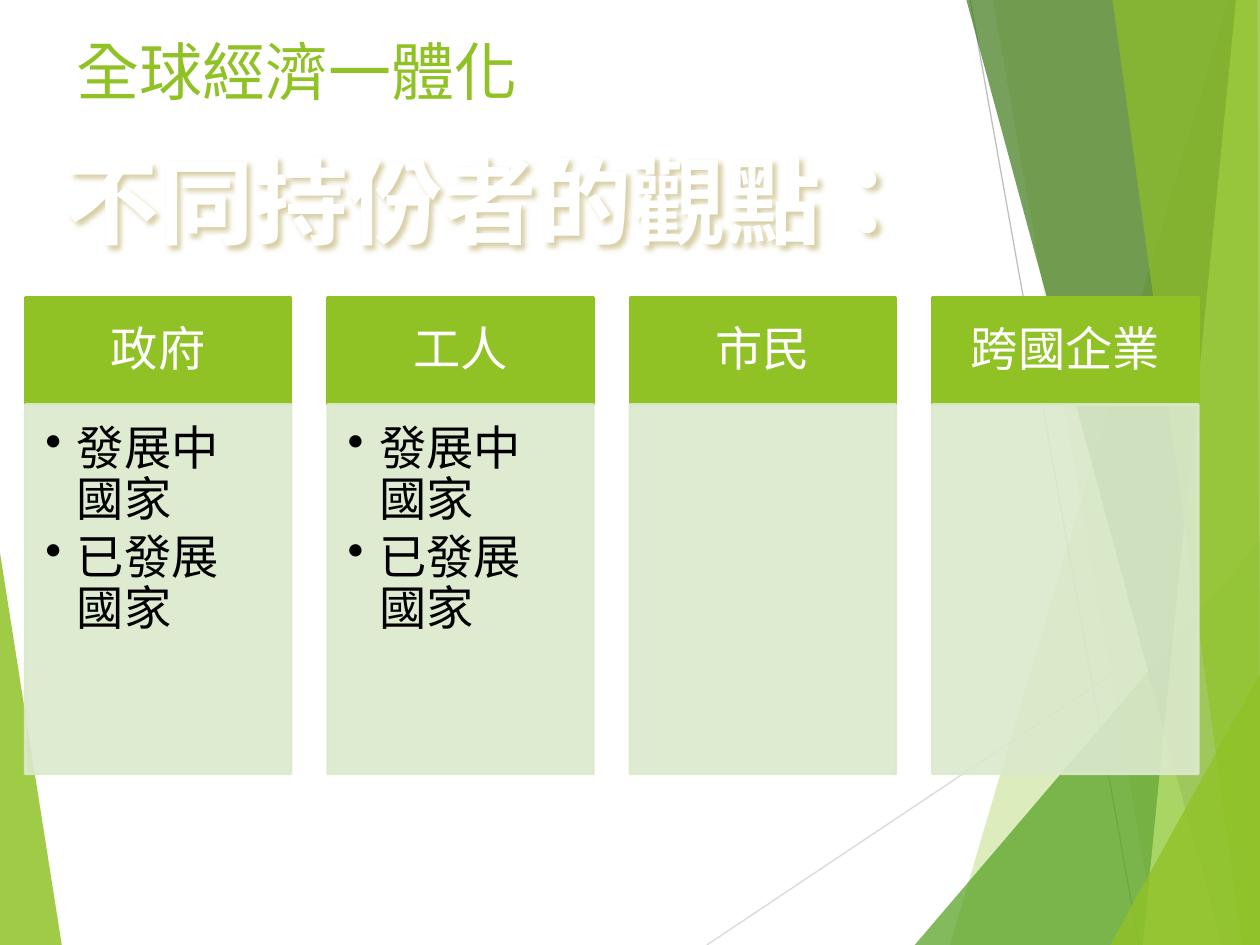
from dataclasses import dataclass

from pptx import Presentation
from pptx.dml.color import RGBColor
from pptx.enum.shapes import MSO_CONNECTOR, MSO_SHAPE
from pptx.enum.text import MSO_ANCHOR as Anchor, PP_ALIGN as Align
from pptx.oxml import parse_xml
from pptx.oxml.ns import nsdecls, qn
from pptx.oxml.xmlchemy import OxmlElement
from pptx.util import Inches, Pt


@dataclass(frozen=True)
class Theme:
    font: str = "Lato"
    language: str = "zh-TW"
    green: str = "90C226"
    leaf: str = "54A021"
    forest: str = "3F7819"
    lime: str = "C0E474"
    pale: str = "DBE9CD"
    white: str = "FFFFFF"
    black: str = "000000"
    glow: str = "D8CFA6"
    light_rule: str = "D9D9D9"
    dark_rule: str = "BFBFBF"
    title_size: int = 36
    headline_size: int = 54
    panel_size: int = 27
    line_spacing: float = 0.9


@dataclass(frozen=True)
class Facet:
    """A translucent polygon; points are percentages of the slide."""
    points: tuple
    color: str
    alpha: int


@dataclass(frozen=True)
class Rule:
    start: tuple
    end: tuple
    color: str


@dataclass(frozen=True)
class Panel:
    heading: str
    items: tuple = ()


THEME = Theme()
WIDTH, HEIGHT = Inches(10), Inches(7.5)

LEFT_FACET = Facet(((0, 58.5), (4.9, 100), (0, 100)), THEME.green, 85)
RULES = (
    Rule((56.1, 100), (100, 60.9), THEME.light_rule),
    Rule((77, 0), (90.4, 100), THEME.dark_rule),
)
RIGHT_FACETS = (
    Facet(((97.5, 0), (75.4, 100), (100, 100), (100, 0)), THEME.green, 30),
    Facet(((78.8, 0), (91.9, 100), (100, 100), (100, 0)), THEME.green, 20),
    Facet(((72.6, 100), (100, 57.2), (100, 100)), THEME.leaf, 72),
    Facet(((76.7, 0), (97, 100), (100, 100), (100, 0)), THEME.forest, 70),
    Facet(((98.1, 0), (90.7, 100), (100, 100), (100, 0)), THEME.lime, 70),
    Facet(((88.3, 0), (98.6, 100), (100, 100), (99.8, 0)), THEME.green, 65),
    Facet(((88.1, 100), (100, 71.3), (100, 100)), THEME.green, 80),
)

COUNTRIES = ("發展中國家", "已發展國家")
PANELS = (Panel("政府", COUNTRIES), Panel("工人", COUNTRIES),
          Panel("市民"), Panel("跨國企業"))
# Panel grid, in percent of the slide
PANEL_LEFT, PANEL_PITCH, PANEL_WIDTH = 2, 24, 21.1
HEADING_TOP, BODY_TOP, BODY_BOTTOM = 31.5, 42.8, 81.9


def across(share: float) -> int:
    return round(WIDTH * share / 100)


def down(share: float) -> int:
    return round(HEIGHT * share / 100)


def set_alpha(shape, percent: int) -> None:
    for color in shape.element.iter(qn("a:srgbClr")):
        alpha = OxmlElement("a:alpha")
        alpha.set("val", str(percent * 1000))
        color.append(alpha)


def write(paragraph, text: str, size: int, color: str, **formats) -> None:
    run = paragraph.add_run()
    run.text = text
    run.font.color.rgb = RGBColor.from_string(color)
    for name, value in {"name": THEME.font, "size": Pt(size), **formats}.items():
        setattr(run.font, name, value)
    run.font._element.set("lang", THEME.language)


def set_frame(frame, anchor, insets: tuple) -> None:
    frame.word_wrap = True
    frame.vertical_anchor = anchor
    sides = ("margin_left", "margin_top", "margin_right", "margin_bottom")
    for side, inset in zip(sides, insets):
        setattr(frame, side, Inches(inset))


def draw_facet(slide, facet: Facet) -> None:
    first, *rest = [(across(x), down(y)) for x, y in facet.points]
    builder = slide.shapes.build_freeform(*first)
    builder.add_line_segments(rest)
    shape = builder.convert_to_shape()
    shape.shadow.inherit = False
    shape.fill.solid()
    shape.fill.fore_color.rgb = RGBColor.from_string(facet.color)
    shape.line.fill.background()
    set_alpha(shape, facet.alpha)


def draw_rule(slide, rule: Rule) -> None:
    (x1, y1), (x2, y2) = rule.start, rule.end
    line = slide.shapes.add_connector(MSO_CONNECTOR.STRAIGHT, across(x1),
                                      down(y1), across(x2), down(y2))
    line.line.width = Pt(0.75)
    line.line.color.rgb = RGBColor.from_string(rule.color)
    line.element.spPr.append(OxmlElement("a:effectLst"))


def draw_box(slide, column: int, top: float, bottom: float, color: str):
    box = slide.shapes.add_shape(
        MSO_SHAPE.RECTANGLE, across(PANEL_LEFT + column * PANEL_PITCH),
        down(top), across(PANEL_WIDTH), down(bottom - top))
    box.shadow.inherit = False
    box.fill.solid()
    box.fill.fore_color.rgb = RGBColor.from_string(color)
    box.line.color.rgb = RGBColor.from_string(color)
    box.line.width = Pt(1.5)
    return box


def add_bullet(paragraph) -> None:
    properties = paragraph._p.get_or_add_pPr()
    indent = Inches(0.25)
    properties.set("marL", str(indent))
    properties.set("indent", str(-indent))
    bullet = OxmlElement("a:buChar")
    bullet.set("char", "•")
    properties.append(bullet)


def draw_panel(slide, column: int, panel: Panel) -> None:
    heading = draw_box(slide, column, HEADING_TOP, BODY_TOP, THEME.green)
    set_frame(heading.text_frame, Anchor.MIDDLE, (0.21, 0.12, 0.21, 0.12))
    label = heading.text_frame.paragraphs[0]
    label.alignment, label.line_spacing = Align.CENTER, THEME.line_spacing
    write(label, panel.heading, THEME.panel_size, THEME.white)

    body = draw_box(slide, column, BODY_TOP, BODY_BOTTOM, THEME.pale)
    set_alpha(body, 90)
    frame = body.text_frame
    set_frame(frame, Anchor.TOP, (0.16, 0.16, 0.21, 0.24))
    for index, item in enumerate(panel.items):
        entry = frame.add_paragraph() if index else frame.paragraphs[0]
        entry.alignment, entry.line_spacing = Align.LEFT, THEME.line_spacing
        entry.space_after = Pt(4)
        add_bullet(entry)
        write(entry, item, THEME.panel_size, THEME.black)


def draw_title(slide, text: str) -> None:
    title = slide.shapes.title
    place = {"left": across(5.1), "top": down(2.8),
             "width": across(90), "height": down(16.7)}
    for name, value in place.items():
        setattr(title, name, value)
    set_frame(title.text_frame, Anchor.TOP, (0.1, 0.05, 0.1, 0.05))
    paragraph = title.text_frame.paragraphs[0]
    paragraph.alignment = Align.LEFT
    write(paragraph, text, THEME.title_size, THEME.green)
    slide.shapes._spTree.append(title.element)  # in front of the facets


def draw_headline(slide, text: str) -> None:
    headline = slide.shapes.add_textbox(across(2.9), down(14.4),
                                        across(72), down(13.4))
    set_frame(headline.text_frame, Anchor.MIDDLE, (0.1, 0.05, 0.1, 0.05))
    paragraph = headline.text_frame.paragraphs[0]
    paragraph.alignment = Align.CENTER
    write(paragraph, text, THEME.headline_size, THEME.white, bold=True)
    headline.element.spPr.append(parse_xml(
        f'<a:effectLst {nsdecls("a")}><a:outerShdw blurRad="38100" '
        'dist="25400" dir="2700000" algn="tl" rotWithShape="0">'
        f'<a:srgbClr val="{THEME.glow}"/></a:outerShdw></a:effectLst>'))


def main() -> None:
    deck = Presentation()
    deck.slide_width, deck.slide_height = WIDTH, HEIGHT
    slide = deck.slides.add_slide(deck.slide_layouts[5])

    # Background facets and rules
    draw_facet(slide, LEFT_FACET)
    for rule in RULES:
        draw_rule(slide, rule)
    for facet in RIGHT_FACETS:
        draw_facet(slide, facet)

    # Headings, then one panel for each stakeholder
    draw_title(slide, "全球經濟一體化")
    draw_headline(slide, "不同持份者的觀點：")
    for column, panel in enumerate(PANELS):
        draw_panel(slide, column, panel)

    deck.save("out.pptx")


if __name__ == "__main__":
    main()
